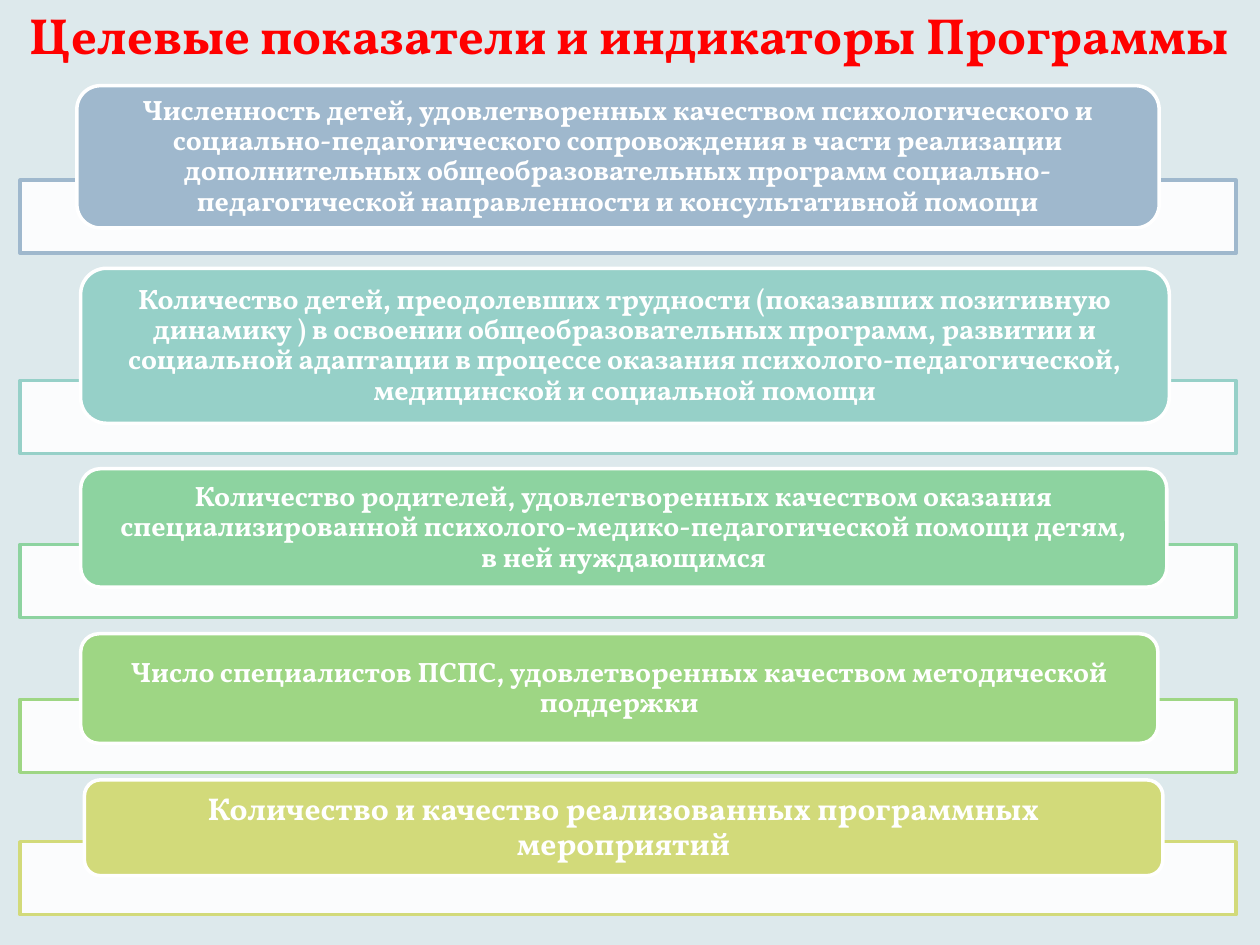
from pptx import Presentation
from pptx.dml.color import RGBColor
from pptx.enum.shapes import MSO_SHAPE
from pptx.enum.text import MSO_ANCHOR, PP_ALIGN
from pptx.oxml.ns import qn
from pptx.util import Inches, Pt
from lxml import etree

RECTANGLE = MSO_SHAPE.RECTANGLE
ROUNDED = MSO_SHAPE.ROUNDED_RECTANGLE
MIDDLE = MSO_ANCHOR.MIDDLE
CENTER = PP_ALIGN.CENTER

FONT = "Vollkorn"
BACKGROUND = RGBColor(0xDD, 0xE9, 0xEC)
WHITE = RGBColor(0xFF, 0xFF, 0xFF)
RED = RGBColor(0xFF, 0x00, 0x00)
BLUE = RGBColor(0x9F, 0xB8, 0xCD)
TEAL = RGBColor(0x96, 0xD0, 0xC8)
MINT = RGBColor(0x8D, 0xD3, 0xA0)
GREEN = RGBColor(0x9E, 0xD6, 0x84)
OLIVE = RGBColor(0xD2, 0xDA, 0x7A)

TITLE = "Целевые показатели и индикаторы Программы"
# text, colour, text size, bar top, (label left, top, width, height)
INDICATORS = [
    ("Численность детей, удовлетворенных качеством психологического и "
     "социально-педагогического сопровождения в части реализации "
     "дополнительных общеобразовательных программ социально-педагогической "
     "направленности и консультативной помощи",
     BLUE, 16, 1.43, (0.61, 0.68, 8.59, 1.13)),
    ("Количество детей, преодолевших трудности (показавших позитивную "
     "динамику ) в освоении общеобразовательных программ, развитии и "
     "социальной адаптации в процессе оказания психолого-педагогической, "
     "медицинской и социальной помощи",
     TEAL, 16, 3.02, (0.64, 2.13, 8.64, 1.23)),
    ("Количество родителей, удовлетворенных качеством оказания "
     "специализированной психолого-медико-педагогической помощи детям, "
     "в ней нуждающимся",
     MINT, 16, 4.32, (0.64, 3.72, 8.62, 0.94)),
    ("Число специалистов ПСПС, удовлетворенных качеством методической "
     "поддержки",
     GREEN, 16, 5.55, (0.64, 5.03, 8.55, 0.87)),
    ("Количество и качество реализованных программных мероприятий",
     OLIVE, 18, 6.68, (0.67, 6.19, 8.56, 0.76)),
]

BAR_LEFT, BAR_WIDTH, BAR_HEIGHT = 0.16, 9.65, 0.58
TEXT_MARGIN = 0.26
CORNER_INSET = 0.05  # share of the height that rounded corners take from text


def add_box(slide, kind, bounds, fill, line):
    box = slide.shapes.add_shape(kind, *map(Inches, bounds))
    box.shadow.inherit = False
    box.fill.solid()
    box.fill.fore_color.rgb = fill
    box.line.color.rgb = line
    box.line.width = Pt(2)
    return box


def set_opacity(shape, percent):
    color = shape.fill._xPr.find(qn("a:solidFill"))[0]
    etree.SubElement(color, qn("a:alpha")).set("val", str(percent * 1000))


def write(shape, text, size, color, margin, spacing=1.0):
    frame = shape.text_frame
    frame.word_wrap = True
    frame.vertical_anchor = MIDDLE
    frame.margin_left = frame.margin_right = Inches(margin)
    frame.margin_top = frame.margin_bottom = 0
    paragraph = frame.paragraphs[0]
    paragraph.text = text
    paragraph.alignment = CENTER
    paragraph.line_spacing = spacing
    font = paragraph.font
    font.name, font.size, font.bold = FONT, Pt(size), True
    font.color.rgb = color


def main():
    deck = Presentation()
    deck.slide_width, deck.slide_height = Inches(10), Inches(7.5)
    slide = deck.slides.add_slide(deck.slide_layouts[6])
    slide.background.fill.solid()
    slide.background.fill.fore_color.rgb = BACKGROUND

    title = slide.shapes.add_textbox(0, 0, deck.slide_width, Inches(0.55))
    write(title, TITLE, 29, RED, 0.1)

    for text, color, size, bar_top, label_bounds in INDICATORS:
        bar = add_box(slide, RECTANGLE,
                      (BAR_LEFT, bar_top, BAR_WIDTH, BAR_HEIGHT), WHITE, color)
        set_opacity(bar, 90)
        label = add_box(slide, ROUNDED, label_bounds, color, WHITE)
        margin = TEXT_MARGIN - CORNER_INSET * label_bounds[3]
        write(label, text, size, WHITE, margin, 0.9)

    deck.save("out.pptx")


if __name__ == "__main__":
    main()
